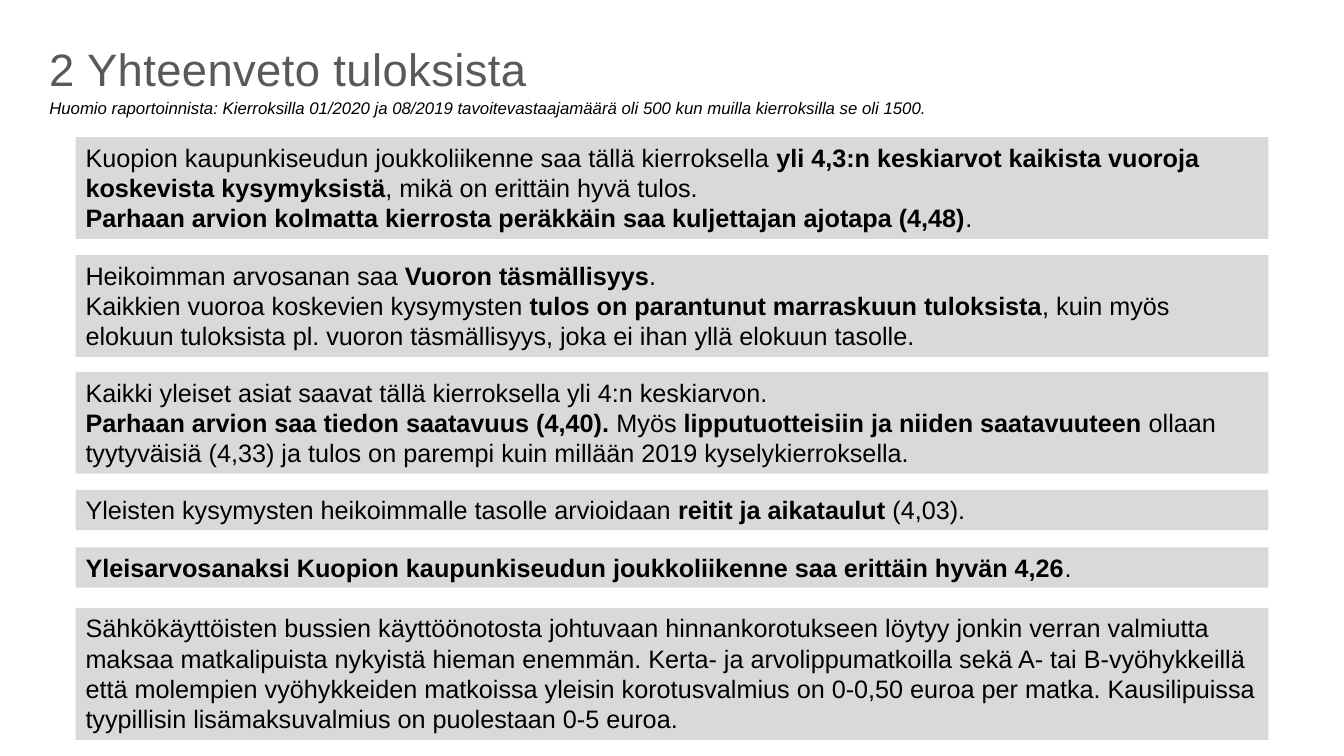
"""Builds the summary slide of the Kuopio public transport survey."""
from pptx import Presentation
from pptx import util as u
from pptx.dml.color import RGBColor
from pptx.enum import shapes, text

COLORS = {"title": "595959", "body": "000000", "panel": "D9D9D9"}
PX = u.Inches(1) // 100
SLIDE = (1333, 750)
PANEL_LEFT, PANEL_WIDTH = 75, 1183
LINE_HEIGHT, PADDING = 30.3, 10

TITLE = "2 Yhteenveto tuloksista"
NOTE = ("Huomio raportoinnista: Kierroksilla 01/2020 ja 08/2019 tavoitevastaajamäärä "
        "oli 500 kun muilla kierroksilla se oli 1500.")

# Each panel: top, number of text lines, paragraphs with **bold** parts.
PANELS = [
    (136, 3, ["Kuopion kaupunkiseudun joukkoliikenne saa tällä kierroksella **yli 4,3:n keskiarvot "
              "kaikista vuoroja koskevista kysymyksistä**, mikä on erittäin hyvä tulos.",
              "**Parhaan arvion kolmatta kierrosta peräkkäin saa kuljettajan ajotapa (4,48)**."]),
    (253, 3, ["Heikoimman arvosanan saa **Vuoron täsmällisyys**.",
              "Kaikkien vuoroa koskevien kysymysten **tulos on parantunut marraskuun tuloksista**, "
              "kuin myös elokuun tuloksista pl. vuoron täsmällisyys, joka ei ihan yllä elokuun "
              "tasolle."]),
    (369, 3, ["Kaikki yleiset asiat saavat tällä kierroksella yli 4:n keskiarvon.",
              "**Parhaan arvion saa tiedon saatavuus (4,40). **Myös **lipputuotteisiin ja niiden "
              "saatavuuteen** ollaan tyytyväisiä (4,33) ja tulos on parempi kuin millään 2019 "
              "kyselykierroksella."]),
    (486, 1, ["Yleisten kysymysten heikoimmalle tasolle arvioidaan **reitit ja aikataulut** (4,03)."]),
    (543, 1, ["**Yleisarvosanaksi Kuopion kaupunkiseudun joukkoliikenne saa erittäin hyvän 4,26**."]),
    (603, 4, ["Sähkökäyttöisten bussien käyttöönotosta johtuvaan hinnankorotukseen löytyy jonkin "
              "verran valmiutta maksaa matkalipuista nykyistä hieman enemmän. Kerta- ja "
              "arvolippumatkoilla sekä A- tai B-vyöhykkeillä että molempien vyöhykkeiden matkoissa "
              "yleisin korotusvalmius on 0-0,50 euroa per matka. Kausilipuissa tyypillisin "
              "lisämaksuvalmius on puolestaan 0-5 euroa."]),
]


def px(*lengths):
    """Turns lengths in px into EMU."""
    return [round(length * PX) for length in lengths]


def write(shape, paragraphs, color, wrap=True, top_inset=5, line_spacing=1.0, **formats):
    """Fills a shape with paragraphs, where ** switches bold on and off."""
    frame = shape.text_frame
    left, top = px(10, top_inset)
    settings = {"word_wrap": wrap, "vertical_anchor": text.MSO_ANCHOR.TOP,
                "margin_left": left, "margin_right": left, "margin_top": top}
    for name, value in settings.items():
        setattr(frame, name, value)
    for index, content in enumerate(paragraphs):
        para = frame.paragraphs[0] if index == 0 else frame.add_paragraph()
        para.alignment = text.PP_ALIGN.LEFT
        para.line_spacing = line_spacing
        for position, part in enumerate(content.split("**")):
            if not part:
                continue
            span = para.add_run()
            span.text = part
            for name, value in {"name": "Arial", "bold": position % 2 == 1, **formats}.items():
                setattr(span.font, name, value)
            span.font.color.rgb = RGBColor.from_string(COLORS[color])


deck = Presentation()
deck.slide_width, deck.slide_height = px(*SLIDE)
page = deck.slides.add_slide(deck.slide_layouts[6])

title = page.shapes.add_textbox(*px(39, 26, 1073, 54))
write(title, [TITLE], "title", top_inset=9, line_spacing=1.1, size=u.Pt(32.4))
for span in title.text_frame.paragraphs[0].runs:
    span.font._element.set("spc", "30")

note = page.shapes.add_textbox(*px(39, 92, 891, 30))
write(note, [NOTE], "body", wrap=False, size=u.Pt(12), italic=True)

for top, lines, paragraphs in PANELS:
    height = round(lines * LINE_HEIGHT + PADDING)
    panel = page.shapes.add_shape(shapes.MSO_SHAPE.RECTANGLE,
                                  *px(PANEL_LEFT, top, PANEL_WIDTH, height))
    panel.shadow.inherit = False
    panel.fill.solid()
    panel.fill.fore_color.rgb = RGBColor.from_string(COLORS["panel"])
    panel.line.fill.background()
    write(panel, paragraphs, "body", size=u.Pt(18))

deck.save("out.pptx")
